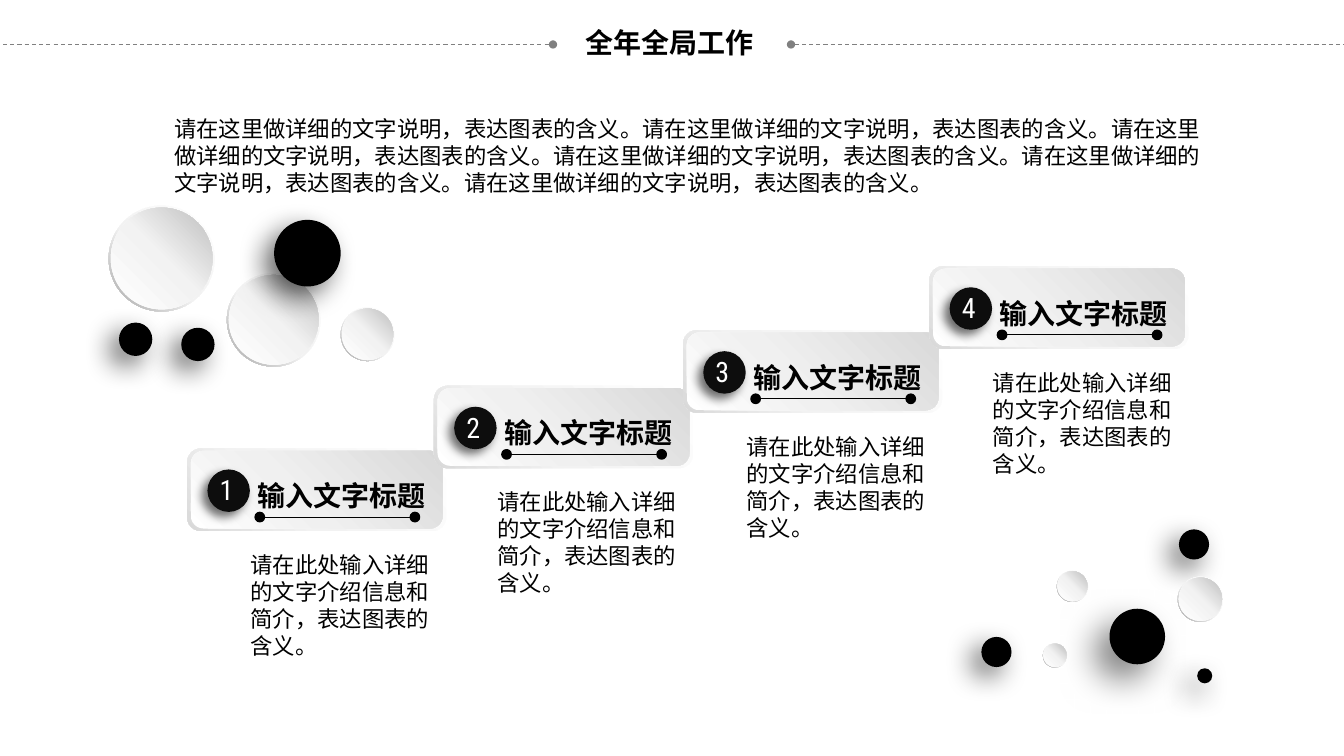
from lxml import etree
from pptx import Presentation
from pptx import util as u
from pptx.dml.color import RGBColor
from pptx.enum import dml, shapes, text
from pptx.oxml.ns import qn

CJK = "Noto Sans CJK SC"
DIGITS = "Roboto Condensed"
BLACK, WHITE = "000000", "FFFFFF"
SHAPE = shapes.MSO_SHAPE

INTRO = [
    "请在这里做详细的文字说明，表达图表的含义。请在这里做详细的文字说明，表达图表的含义。请在这里",
    "做详细的文字说明，表达图表的含义。请在这里做详细的文字说明，表达图表的含义。请在这里做详细的",
    "文字说明，表达图表的含义。请在这里做详细的文字说明，表达图表的含义。",
]
STEP_TITLE = "输入文字标题"
STEP_BODY = "请在此处输入详细的文字介绍信息和简介，表达图表的含义。"
STEPS = [(4.72, 11.3), (10.94, 9.72), (17.22, 8.32), (23.43, 6.71)]

CARD_RIM = [(0, WHITE), (62, "F2F2F2"), (100, "D9D9D9")]
CARD_FACE = [(0, WHITE), (42, "F0F0F0"), (100, "D9D9D9")]
DISC_RIM = [(0, WHITE), (55, "F2F2F2"), (100, "A6A6A6")]
DISC_FACE = [(0, WHITE), (51, "F2F2F2"), (100, "BFBFBF")]

BADGE_SHADOW = (57, 7, 5)
BALL_SHADOW = (60, 20, 10)
DEEP_SHADOW = (50, 25, 15)
PALE = None
CIRCLES = [
    (2.74, 5.18, 2.67, PALE),
    (27.97, 15.34, 1.4, DEEP_SHADOW),
    (29.72, 13.34, 0.76, BALL_SHADOW),
    (5.72, 6.88, 2.36, PALE),
    (26.29, 16.21, 0.61, PALE),
    (26.64, 14.38, 0.79, PALE),
    (6.91, 5.54, 1.68, BALL_SHADOW),
    (3, 8.13, 0.84, BALL_SHADOW),
    (29.69, 14.53, 1.14, PALE),
    (24.74, 16.05, 0.76, BALL_SHADOW),
    (4.57, 8.26, 0.84, BALL_SHADOW),
    (8.59, 7.75, 1.35, PALE),
    (30.18, 16.84, 0.38, BALL_SHADOW),
]


def color(value):
    """Turn a hex string into a colour."""
    return RGBColor.from_string(value)


def add_node(parent, tag, **attributes):
    """Append a drawing element with the given attributes."""
    node = etree.SubElement(parent, qn(tag))
    for name, value in attributes.items():
        node.set(name, str(value))
    return node


def add_figure(page, kind, left, top, width, height, fill=BLACK):
    """Add a flat shape without outline or shadow."""
    figure = page.shapes.add_shape(
        kind, u.Cm(left), u.Cm(top), u.Cm(width), u.Cm(height))
    figure.shadow.inherit = False
    figure.fill.solid()
    figure.fill.fore_color.rgb = color(fill)
    figure.line.fill.background()
    return figure


def set_gradient(figure, stops, angle):
    """Replace the solid fill with a linear gradient."""
    solid = figure.element.spPr.find(qn("a:solidFill"))
    gradient = etree.Element(qn("a:gradFill"), rotWithShape="1")
    stop_list = add_node(gradient, "a:gsLst")
    for position, value in stops:
        stop = add_node(stop_list, "a:gs", pos=position * 1000)
        add_node(stop, "a:srgbClr", val=value)
    add_node(gradient, "a:lin", ang=angle * 60000, scaled=0)
    solid.getparent().replace(solid, gradient)


def set_shadow(figure, opacity, blur, distance):
    """Cast a soft black shadow to the lower left."""
    effects = figure.element.spPr.find(qn("a:effectLst"))
    shadow = add_node(effects, "a:outerShdw", blurRad=u.Pt(blur), dist=u.Pt(distance),
                      dir=135 * 60000, algn="tr", rotWithShape=0)
    tint = add_node(shadow, "a:srgbClr", val=BLACK)
    add_node(tint, "a:alpha", val=opacity * 1000)


def add_line(page, start, end, y, value, dashed=False):
    """Add a thin horizontal line, dashed with round ends if asked."""
    line = page.shapes.add_connector(
        shapes.MSO_CONNECTOR.STRAIGHT, u.Cm(start), u.Cm(y), u.Cm(end), u.Cm(y))
    line.line.width = u.Pt(0.75)
    line.line.color.rgb = color(value)
    if dashed:
        line.line.dash_style = dml.MSO_LINE.DASH
        outline = line.line._get_or_add_ln()
        for tag in ("a:headEnd", "a:tailEnd"):
            add_node(outline, tag, type="oval")
    add_node(line._element.spPr, "a:effectLst")


def format_text(frame, size, value=BLACK, font=CJK, bold=False, align=None, spacing=None):
    """Apply one look to every paragraph of a text frame."""
    frame.word_wrap = True
    for para in frame.paragraphs:
        para.alignment = align
        para.line_spacing = spacing
        for span in para.runs:
            span.font.size = u.Pt(size)
            span.font.bold = bold
            span.font.name = font
            span.font.color.rgb = color(value)
            add_node(span.font._element, "a:ea", typeface=font)


def add_text(page, content, left, top, width, height, size, **look):
    """Add a formatted text box."""
    box = page.shapes.add_textbox(u.Cm(left), u.Cm(top), u.Cm(width), u.Cm(height))
    box.text_frame.text = content
    format_text(box.text_frame, size, **look)


def add_header(page):
    """Place the title between two dashed lines."""
    title = page.shapes.title
    title.left, title.top, title.width, title.height = (
        u.Cm(13.67), u.Cm(0.41), u.Cm(6.4), u.Cm(1.32))
    title.text_frame.text = "全年全局工作"
    title.text_frame.vertical_anchor = text.MSO_ANCHOR.MIDDLE
    format_text(title.text_frame, 20, bold=True, align=text.PP_ALIGN.CENTER)
    for start, end in ((-1.47, 13.94), (19.94, 35.33)):
        add_line(page, start, end, 1.12, "808080", dashed=True)


def add_circle(page, left, top, size, shadow):
    """Add a black ball with a shadow, or a pale rimmed disc."""
    if shadow:
        set_shadow(add_figure(page, SHAPE.OVAL, left, top, size, size), *shadow)
        return
    rim = add_figure(page, SHAPE.DONUT, left, top, size, size)
    rim.adjustments[0] = 0.05
    set_gradient(rim, DISC_RIM, 135)
    inset = 0.02 * size
    inner = size - 2 * inset
    face = add_figure(page, SHAPE.OVAL, left + inset, top + inset, inner, inner)
    set_gradient(face, DISC_FACE, 315)


def add_step(page, number, left, top):
    """Add a numbered card with its underlined heading and description."""
    rim = add_figure(page, SHAPE.ROUNDED_RECTANGLE, left, top, 6.53, 2.08)
    set_gradient(rim, CARD_RIM, 135)
    face = add_figure(page, SHAPE.ROUNDED_RECTANGLE, left + 0.09, top + 0.06, 6.35, 1.96)
    set_gradient(face, CARD_FACE, 315)
    badge = add_figure(page, SHAPE.OVAL, left + 0.51, top + 0.53, 1.07, 1.07, "0D0D0D")
    set_shadow(badge, *BADGE_SHADOW)
    add_text(page, STEP_TITLE, left + 1.52, top + 0.53, 5.38, 1.12, 20,
             bold=True, spacing=u.Pt(27))
    add_text(page, str(number), left + 0.38, top + 0.49, 1.22, 1.12, 20,
             value=WHITE, font=DIGITS, align=text.PP_ALIGN.CENTER)
    add_line(page, left + 1.93, left + 5.64, top + 1.73, BLACK)
    for offset in (1.73, 5.64):
        dot = add_figure(page, SHAPE.OVAL, left + offset, top + 1.63, 0.2, 0.2)
        dot.line.color.rgb = color(BLACK)
        dot.line.width = u.Pt(2)
    add_text(page, STEP_BODY, left + 1.35, top + 2.46, 5.21, 4.19, 16, spacing=u.Pt(19.3))


def main():
    """Build the slide and save it."""
    deck = Presentation()
    deck.slide_width, deck.slide_height = u.Cm(33.88), u.Cm(19.05)
    page = deck.slides.add_slide(deck.slide_layouts[5])
    add_header(page)
    add_text(page, "\n".join(INTRO), 4.14, 2.77, 27.86, 2.31, 16, spacing=u.Pt(19.3))
    for circle in CIRCLES:
        add_circle(page, *circle)
    for number, (left, top) in enumerate(STEPS, 1):
        add_step(page, number, left, top)
    deck.save("out.pptx")


if __name__ == "__main__":
    main()
